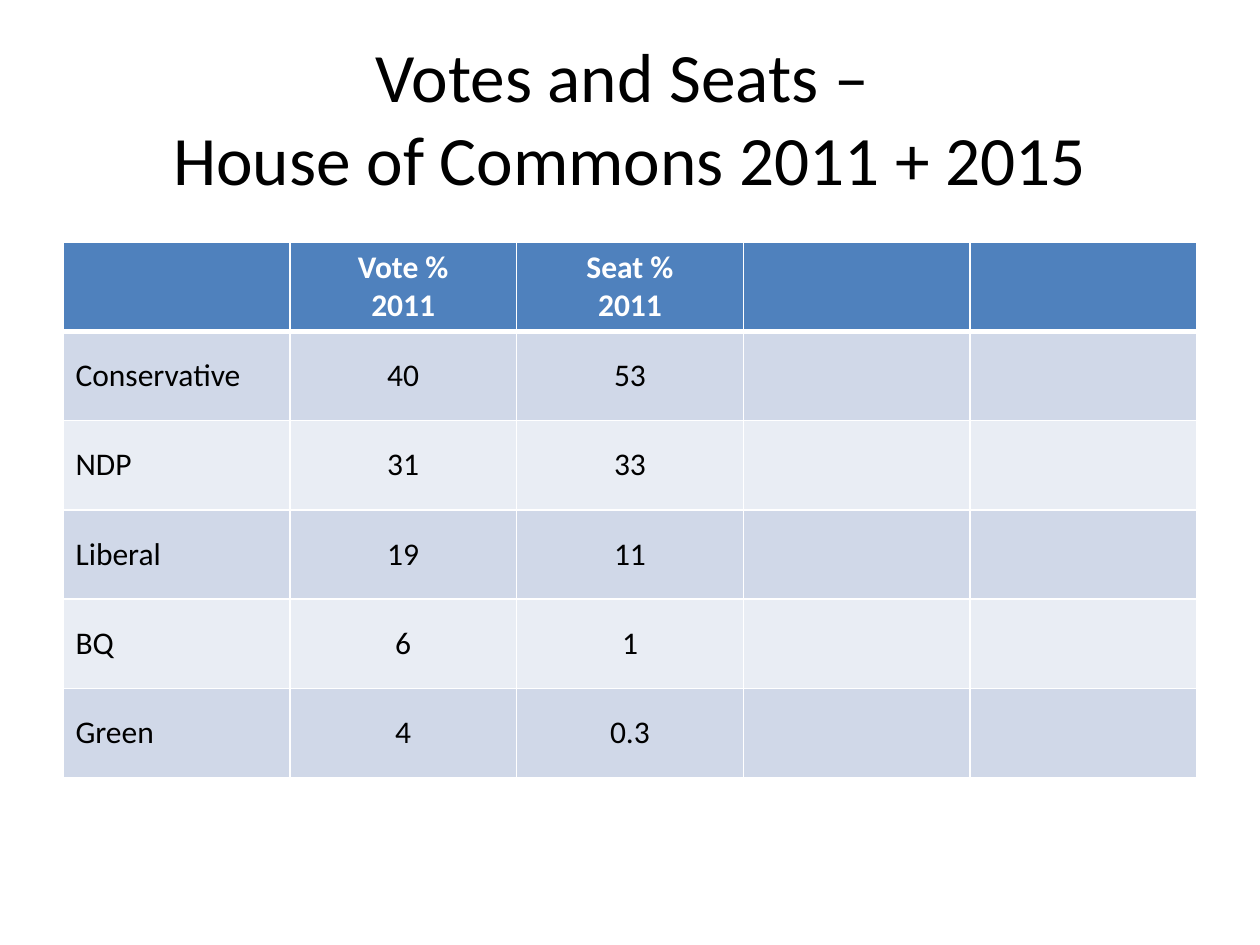
from dataclasses import dataclass

import pptx
import pptx.dml.color
import pptx.enum.text
import pptx.oxml
import pptx.oxml.ns
import pptx.util

ALIGN = pptx.enum.text.PP_ALIGN
MIDDLE = pptx.enum.text.MSO_ANCHOR.MIDDLE
TOP = pptx.enum.text.MSO_ANCHOR.TOP


@dataclass(frozen=True)
class Theme:
    font: str = "Calibri"
    title_size: float = 39.6
    table_size: float = 18
    dark: str = "000000"
    light: str = "FFFFFF"
    header: str = "4F81BD"
    bands: tuple[str, str] = ("D0D8E8", "E9EDF4")
    rule: float = 1
    header_rule: float = 3


@dataclass(frozen=True)
class Box:
    """A place given in shares of the slide's size."""
    left: float
    top: float
    width: float
    height: float


@dataclass(frozen=True)
class PartyResult:
    party: str
    vote: str
    seat: str


THEME = Theme()
SLIDE_WIDTH = pptx.util.Inches(10)
SLIDE_HEIGHT = pptx.util.Inches(7.5)
TITLE_BOX = Box(0.05, 0.04, 0.9, 1 / 6)
TABLE_BOX = Box(0.05, 0.256, 0.9, 0.567)

TITLE_LINES = ["Votes and Seats – ", "House of Commons 2011 + 2015"]
HEADINGS = [[], ["Vote %", "2011"], ["Seat %", "2011"], [], []]
RESULTS = [
    PartyResult("Conservative", "40", "53"),
    PartyResult("NDP", "31", "33"),
    PartyResult("Liberal", "19", "11"),
    PartyResult("BQ", "6", "1"),
    PartyResult("Green", "4", "0.3"),
]


def place(box: Box) -> tuple[int, int, int, int]:
    return (round(box.left * SLIDE_WIDTH), round(box.top * SLIDE_HEIGHT),
            round(box.width * SLIDE_WIDTH), round(box.height * SLIDE_HEIGHT))


def add_run(paragraph, text: str, size: float, color: str, bold: bool = False) -> None:
    run = paragraph.add_run()
    run.text = text
    run.font.name = THEME.font
    run.font.size = pptx.util.Pt(size)
    run.font.bold = bold
    run.font.color.rgb = pptx.dml.color.RGBColor.from_string(color)


def add_title(slide, box: Box, lines: list[str]) -> None:
    frame = slide.shapes.add_textbox(*place(box)).text_frame
    frame.word_wrap = True
    frame.vertical_anchor = MIDDLE
    paragraph = frame.paragraphs[0]
    paragraph.alignment = ALIGN.CENTER
    for index, line in enumerate(lines):
        if index:
            paragraph.add_line_break()
        add_run(paragraph, line, THEME.title_size, THEME.dark)


def set_borders(cell, top: float, bottom: float) -> None:
    """Draw the four cell borders; they must come before the cell's fill."""
    properties = cell._tc.get_or_add_tcPr()
    widths = {"lnL": THEME.rule, "lnR": THEME.rule, "lnT": top, "lnB": bottom}
    for index, (side, width) in enumerate(widths.items()):
        properties.insert(index, pptx.oxml.parse_xml(
            f'<a:{side} {pptx.oxml.ns.nsdecls("a")} w="{pptx.util.Pt(width)}">'
            f'<a:solidFill><a:srgbClr val="{THEME.light}"/></a:solidFill></a:{side}>'))


def fill_cell(cell, lines: list[str], row: int, column: int) -> None:
    is_header = row == 0
    fill = THEME.header if is_header else THEME.bands[(row - 1) % 2]
    cell.fill.solid()
    cell.fill.fore_color.rgb = pptx.dml.color.RGBColor.from_string(fill)
    cell.vertical_anchor = TOP if is_header else MIDDLE
    set_borders(cell,
                top=THEME.header_rule if row == 1 else THEME.rule,
                bottom=THEME.header_rule if is_header else THEME.rule)
    frame = cell.text_frame
    for index, line in enumerate(lines):
        paragraph = frame.add_paragraph() if index else frame.paragraphs[0]
        paragraph.alignment = ALIGN.CENTER if column else ALIGN.LEFT
        add_run(paragraph, line, THEME.table_size,
                THEME.light if is_header else THEME.dark, bold=is_header)


def add_results_table(slide, box: Box, results: list[PartyResult]) -> None:
    rows = [HEADINGS] + [[[result.party], [result.vote], [result.seat], [], []]
                         for result in results]
    table = slide.shapes.add_table(len(rows), len(HEADINGS), *place(box)).table
    for row, contents in enumerate(rows):
        for column, lines in enumerate(contents):
            fill_cell(table.cell(row, column), lines, row, column)


def main() -> None:
    presentation = pptx.Presentation()
    presentation.slide_width = SLIDE_WIDTH
    presentation.slide_height = SLIDE_HEIGHT
    slide = presentation.slides.add_slide(presentation.slide_layouts[6])

    # Heading
    add_title(slide, TITLE_BOX, TITLE_LINES)

    # Vote and seat shares by party, with empty columns left for 2015
    add_results_table(slide, TABLE_BOX, RESULTS)

    presentation.save("out.pptx")


if __name__ == "__main__":
    main()
